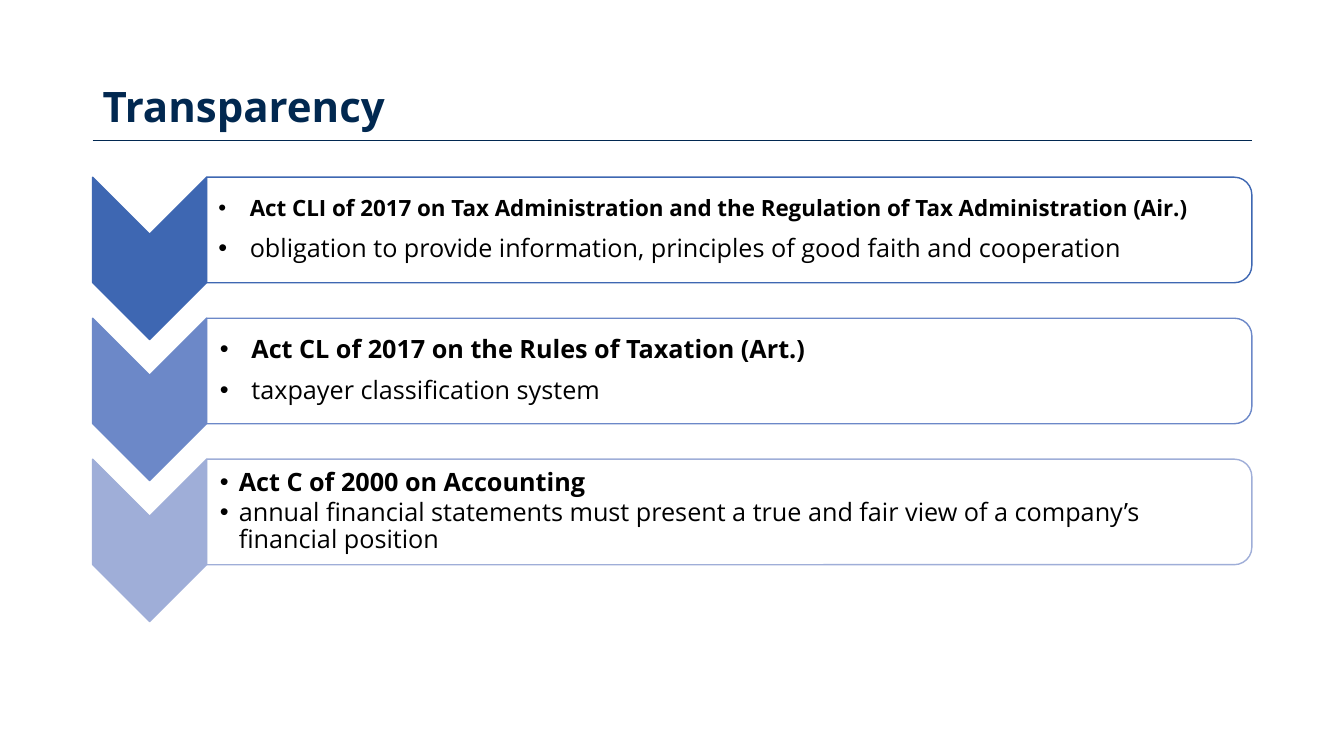
from lxml.etree import SubElement
from pptx import Presentation
from pptx.dml.color import RGBColor
from pptx.enum.shapes import MSO_CONNECTOR, MSO_SHAPE
from pptx.enum.text import MSO_ANCHOR
from pptx.oxml.ns import qn
from pptx.util import Pt

COLORS = {
    "navy": "012850", "rule": "012851", "black": "000000", "white": "FFFFFF",
    "dark": "3E67B2", "medium": "6C88C8", "light": "9FAED8",
}
FONT = "Open Sans"
LEFT, RIGHT = 66.2, 894.2
FIRST_TOP, PITCH = 126.6, 100.7
CHEVRON_WIDTH, CHEVRON_HEIGHT = 81.4, 116
PANEL_LEFT, PANEL_HEIGHT = 147.6, 75.4

# colour, left inset, bullet indent, gap, act, act size, detail
ACTS = [
    ("dark", 8.9, 22.5, 10,
     "Act CLI of 2017 on Tax Administration and the Regulation of Tax Administration (Air.)",
     16, "obligation to provide information, principles of good faith and cooperation"),
    ("medium", 10.1, 22.5, 10,
     "Act CL of 2017 on the Rules of Taxation (Art.)",
     18, "taxpayer classification system"),
    ("light", 10.1, 13.5, 2.2,
     "Act C of 2000 on Accounting",
     18, "annual financial statements must present a true and fair view of "
         "a company’s financial position"),
]


def rgb(name):
    return RGBColor.from_string(COLORS[name])


def add_rule(slide, y):
    rule = slide.shapes.add_connector(
        MSO_CONNECTOR.STRAIGHT, Pt(LEFT), Pt(y), Pt(RIGHT), Pt(y))
    rule.line.color.rgb = rgb("rule")
    rule.line.width = Pt(0.5)
    SubElement(rule._element.spPr, qn("a:effectLst"))


def add_turned_shape(slide, kind, left, top, width, height, fill, line, opacity=100):
    """Add a shape turned by 90 degrees that covers the given box on the slide."""
    shift = (width - height) / 2
    shape = slide.shapes.add_shape(
        kind, Pt(left + shift), Pt(top - shift), Pt(height), Pt(width))
    shape.rotation = 90
    shape.shadow.inherit = False
    shape.fill.solid()
    shape.fill.fore_color.rgb = rgb(fill)
    shape.line.color.rgb = rgb(line)
    shape.line.width = Pt(1)
    if opacity < 100:
        color = shape._element.spPr.find(qn("a:solidFill"))[0]
        SubElement(color, qn("a:alpha"), val=str(opacity * 1000))


def add_frame(slide, left, top, width, height, insets):
    frame = slide.shapes.add_textbox(Pt(left), Pt(top), Pt(width), Pt(height)).text_frame
    frame.word_wrap = True
    frame.vertical_anchor = MSO_ANCHOR.MIDDLE
    (frame.margin_left, frame.margin_top,
     frame.margin_right, frame.margin_bottom) = map(Pt, insets)
    return frame


def write(paragraph, text, *, size, color="black", bold=False, indent=0, before=0):
    """Write one formatted paragraph; an indent gives it a bullet."""
    paragraph.line_spacing = 0.9
    paragraph.space_before = Pt(before)
    if indent:
        properties = paragraph._p.get_or_add_pPr()
        properties.set("marL", str(Pt(indent)))
        properties.set("indent", str(-Pt(indent)))
        SubElement(properties, qn("a:buFont"), typeface="Arial")
        SubElement(properties, qn("a:buChar"), char="•")
    run = paragraph.add_run()
    run.text = text
    run.font.name = FONT
    run.font.size = Pt(size)
    run.font.bold = bold
    run.font.color.rgb = rgb(color)


def add_act(slide, top, color, inset, indent, gap, act, act_size, detail):
    add_turned_shape(slide, MSO_SHAPE.CHEVRON, LEFT, top,
                     CHEVRON_WIDTH, CHEVRON_HEIGHT, color, color)
    add_turned_shape(slide, MSO_SHAPE.ROUND_2_SAME_RECTANGLE, PANEL_LEFT, top,
                     RIGHT - PANEL_LEFT, PANEL_HEIGHT, "white", color, opacity=90)
    frame = add_frame(slide, 147, top + 3.8, 743, 67.8, (inset, 0.8, 0.8, 0.8))
    write(frame.paragraphs[0], act, size=act_size, bold=True, indent=indent)
    write(frame.add_paragraph(), detail, size=18, indent=indent, before=gap)


def main():
    deck = Presentation()
    deck.slide_width, deck.slide_height = Pt(960), Pt(540)
    slide = deck.slides.add_slide(deck.slide_layouts[6])
    add_rule(slide, 100.3)
    title = add_frame(slide, LEFT, 56.6, RIGHT - LEFT, 41.8, (7.2, 3.6, 7.2, 3.6))
    write(title.paragraphs[0], "Transparency", size=30, color="navy", bold=True)
    for row, act in enumerate(ACTS):
        add_act(slide, FIRST_TOP + row * PITCH, *act)
    deck.save("out.pptx")


if __name__ == "__main__":
    main()
